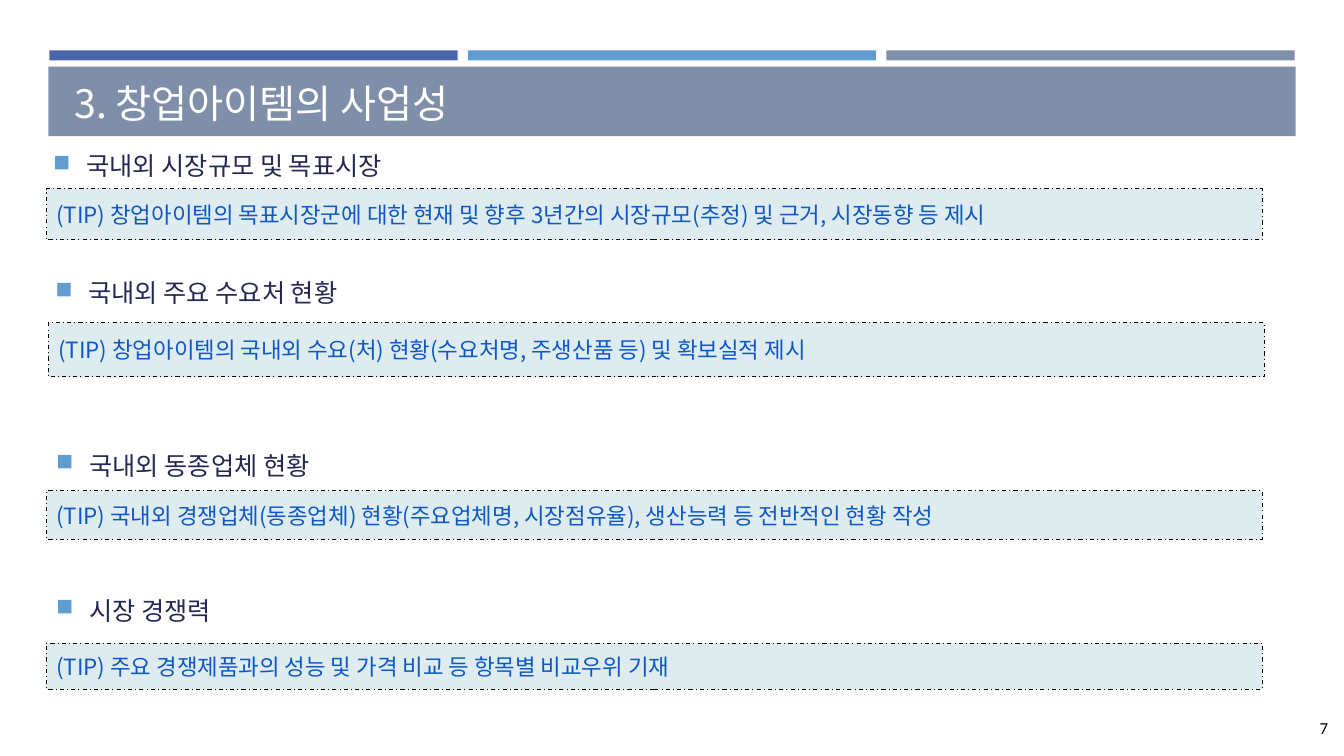
from lxml.etree import SubElement
from pptx import Presentation
from pptx.dml.color import RGBColor
from pptx.enum.dml import MSO_LINE_DASH_STYLE as Dash
from pptx.enum.shapes import MSO_AUTO_SHAPE_TYPE as Shape
from pptx.enum.text import MSO_VERTICAL_ANCHOR as Anchor, PP_PARAGRAPH_ALIGNMENT as Align
from pptx.oxml.ns import qn
from pptx.util import Inches, Pt

WHITE = RGBColor(0xFF, 0xFF, 0xFF)
BLACK = RGBColor(0x00, 0x00, 0x00)
NAVY = RGBColor(0x24, 0x28, 0x52)
INDIGO = RGBColor(0x4A, 0x66, 0xAC)
SKY = RGBColor(0x62, 0x9D, 0xD1)
SLATE = RGBColor(0x7F, 0x8F, 0xA9)
TIP_FILL = RGBColor(0xDE, 0xEC, 0xEF)
TIP_BLUE = RGBColor(0x0E, 0x58, 0xC4)

SECTION_WIDTH = 12.06
SECTIONS = [
    ("국내외 시장규모 및 목표시장", (0.43, 1.39),
     "(TIP) 창업아이템의 목표시장군에 대한 현재 및 향후 3년간의 시장규모(추정) 및 근거, 시장동향 등 제시",
     (0.46, 1.87), 0.51),
    ("국내외 주요 수요처 현황", (0.45, 2.65),
     "(TIP) 창업아이템의 국내외 수요(처) 현황(수요처명, 주생산품 등) 및 확보실적 제시",
     (0.48, 3.2), 0.54),
    ("국내외 동종업체 현황", (0.46, 4.36),
     "(TIP) 국내외 경쟁업체(동종업체) 현황(주요업체명, 시장점유율), 생산능력 등 전반적인 현황 작성",
     (0.46, 4.87), 0.48),
    ("시장 경쟁력", (0.46, 5.8),
     "(TIP) 주요 경쟁제품과의 성능 및 가격 비교 등 항목별 비교우위 기재",
     (0.46, 6.38), 0.46),
]


def write_text(box, text, size, color, font="Noto Sans CJK KR", align=Align.LEFT, spaced=False):
    frame = box.text_frame
    frame.word_wrap = True
    frame.vertical_anchor = Anchor.MIDDLE
    para = frame.paragraphs[0]
    para.alignment = align
    if spaced:
        para.space_before = Pt(size * 0.2)
        para.space_after = Pt(6)
    span = para.add_run()
    span.text = text
    span.font.size = Pt(size)
    span.font.color.rgb = color
    span.font.name = font
    SubElement(span.font._element, qn("a:ea"), typeface=font)
    return para


class SlideBuilder:
    def __init__(self, page):
        self.page = page

    def bar(self, left, top, width, height, fill):
        box = self.page.shapes.add_shape(
            Shape.RECTANGLE, Inches(left), Inches(top), Inches(width), Inches(height))
        box.shadow.inherit = False
        box.fill.solid()
        box.fill.fore_color.rgb = fill
        box.line.fill.background()
        return box

    def label(self, left, top, width, height, text, size, color, **style):
        box = self.page.shapes.add_textbox(
            Inches(left), Inches(top), Inches(width), Inches(height))
        return write_text(box, text, size, color, **style)

    def heading(self, left, top, text):
        para = self.label(left, top, SECTION_WIDTH, 0.51, text, 18, NAVY, spaced=True)
        props = para._p.get_or_add_pPr()
        props.set("marL", str(Inches(0.33)))
        props.set("indent", str(Inches(-0.33)))
        bullet_color = SubElement(props, qn("a:buClr"))
        SubElement(bullet_color, qn("a:srgbClr"), val=str(SKY))
        SubElement(props, qn("a:buSzPct"), val="92000")
        SubElement(props, qn("a:buChar"), char="■")

    def tip(self, left, top, height, text):
        box = self.bar(left, top, SECTION_WIDTH, height, TIP_FILL)
        box.line.color.rgb = BLACK
        box.line.width = Pt(0.75)
        box.line.dash_style = Dash.DASH_DOT
        write_text(box, text, 16, TIP_BLUE, spaced=True)


def main():
    deck = Presentation()
    deck.slide_width = Inches(13.33)
    deck.slide_height = Inches(7.5)
    builder = SlideBuilder(deck.slides.add_slide(deck.slide_layouts[6]))

    for column, color in enumerate((INDIGO, SKY, SLATE)):
        builder.bar(0.49 + column * 4.15, 0.5, 4.05, 0.1, color)
    builder.bar(0.48, 0.66, 12.37, 0.69, SLATE)
    builder.label(0.64, 0.72, 7.58, 0.6, "3. 창업아이템의 사업성", 28, WHITE)

    for heading, heading_spot, tip, tip_spot, tip_height in SECTIONS:
        builder.heading(*heading_spot, heading)
        builder.tip(*tip_spot, tip_height, tip)

    builder.label(12.12, 7.02, 1.15, 0.4, "7", 12, BLACK, font="Calibri", align=Align.RIGHT)
    deck.save("out.pptx")


if __name__ == "__main__":
    main()
